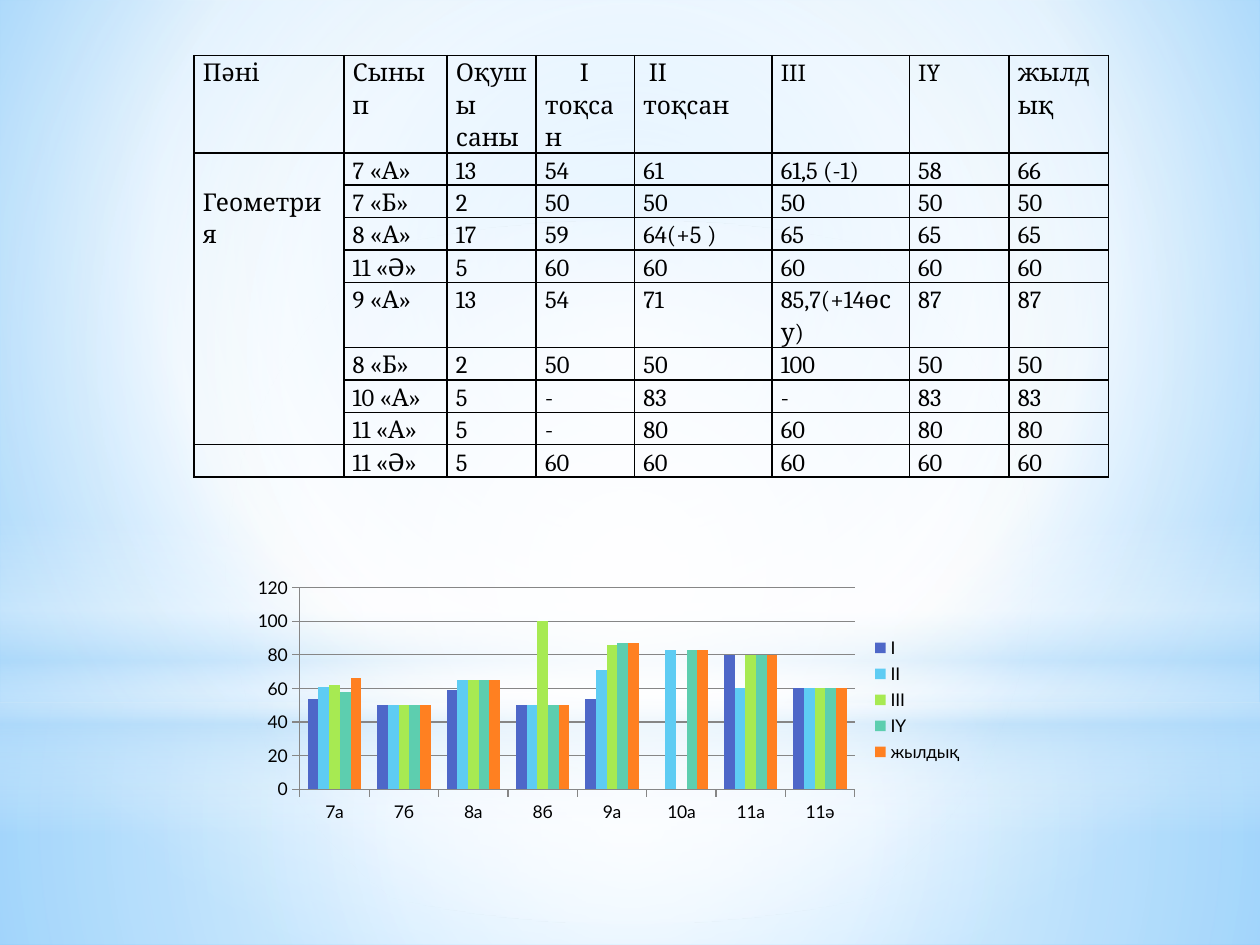
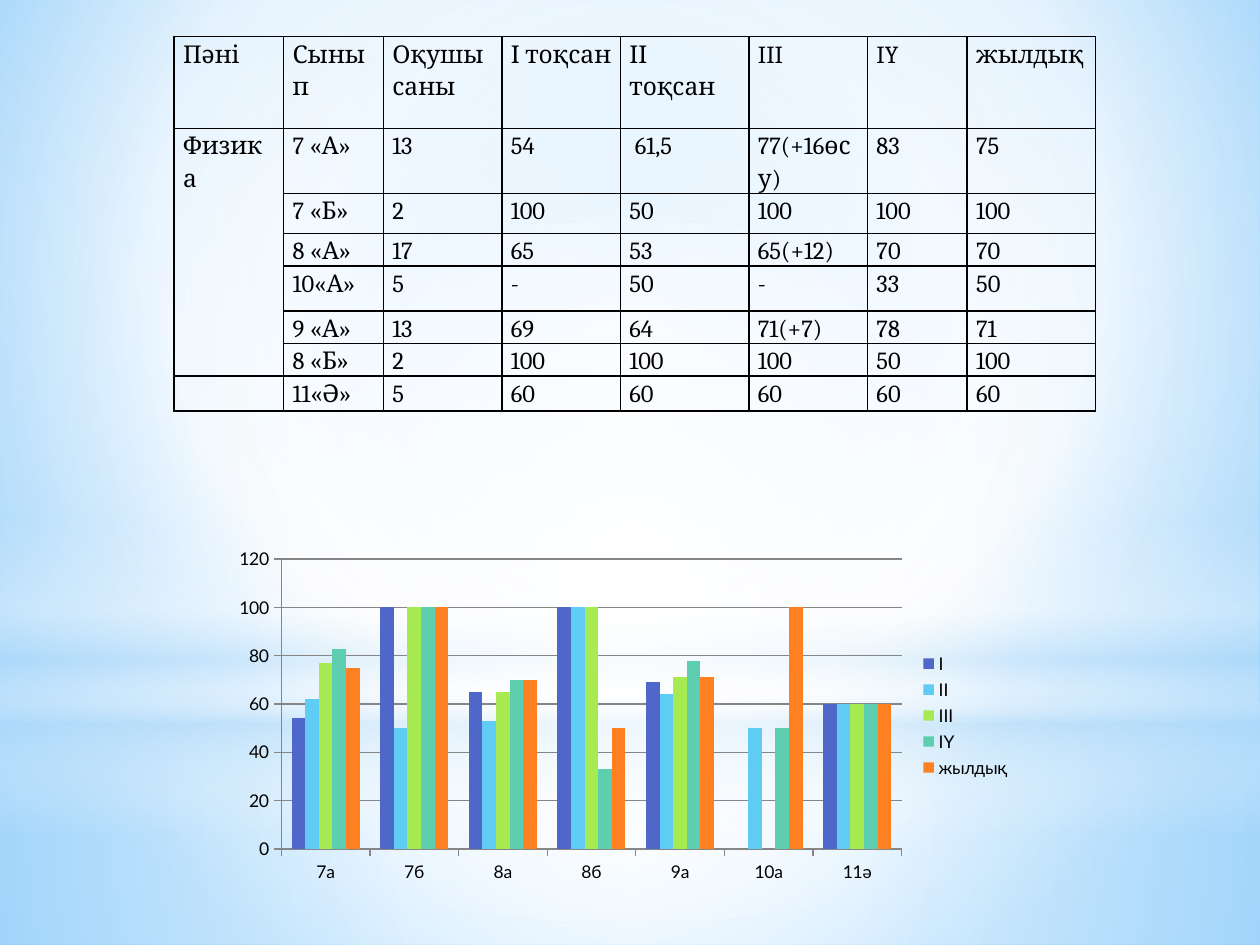
import pptx
import pptx.util
import pptx.chart.data
import pptx.dml.color
import pptx.enum.chart
import pptx.enum.shapes
import pptx.oxml
import pptx.oxml.ns
import lxml.etree

Cm = pptx.util.Cm
Pt = pptx.util.Pt
RGB = pptx.dml.color.RGBColor
qn = pptx.oxml.ns.qn

BLACK = RGB(0, 0, 0)
WHITE = RGB(255, 255, 255)
GRAY = RGB(0x86, 0x86, 0x86)
PALE = RGB(0xB4, 0xDC, 0xFA)
SKY = RGB(0x9E, 0xD5, 0xFF)
AZURE = RGB(0x5B, 0xB9, 0xFF)
TERMS = [
    ("І", RGB(0x4E, 0x67, 0xC8)),
    ("ІІ", RGB(0x5E, 0xCC, 0xF3)),
    ("ІІІ", RGB(0xA7, 0xEA, 0x52)),
    ("ІҮ", RGB(0x5D, 0xCE, 0xAF)),
    ("жылдық", RGB(0xFF, 0x80, 0x21)),
]
FONT = "Cambria"
LABEL = "Lato"
MID = (50, 50, 50, 50)

BACK = [(0, SKY, 100), (60, WHITE, 100), (100, AZURE, 100)]
RECT = pptx.enum.shapes.MSO_SHAPE.RECTANGLE
OVAL = pptx.enum.shapes.MSO_SHAPE.OVAL
BANDS = [
    (RECT, (0, 14.17, 25.4, 4.88), [(0, WHITE, 91), (37, WHITE, 76), (100, PALE, 79)], MID),
    (RECT, (0, 0, 25.4, 14.17), [(0, WHITE, 89), (48, WHITE, 62), (100, PALE, 79)], MID),
    (RECT, (0, 10.46, 25.4, 6.35),
     [(0, WHITE, 0), (29, WHITE, 30), (45, PALE, 40), (55, WHITE, 26), (65, PALE, 60), (100, WHITE, 0)], None),
    (OVAL, (0, 4.45, 25.4, 14.17), [(0, WHITE, 100), (56, WHITE, 0)], MID),
]

PAGES = [
    {
        "spot": (3.91, 1.12), "tall": 8.86,
        "cols": [3.02, 2.08, 1.8, 1.98, 2.77, 2.77, 2.01, 2.01],
        "rows": [1.22] + [0.61] * 9,
        "head": ["Пәні", "Сынып", "Оқушы саны", "І тоқсан", " ІІ\nтоқсан", "III", "IY", "жылдық"],
        "topic": "Геометрия",
        "drop": 0.65, "indent": 0.7,
        "marks": [
            ["7 «А»", "13", "54", "61", "61,5 (-1)", "58", "66"],
            ["7 «Б»", "2", "50", "50", "50", "50", "50"],
            ["8 «А»", "17", "59", "64(+5 )", "65", "65", "65"],
            ["11 «Ә»", "5", "60", "60", "60", "60", "60"],
            ["9 «А»", "13", "54", "71", "85,7(+14өсу)", "87", "87"],
            ["8 «Б»", "2", "50", "50", "100", "50", "50"],
            ["10 «А»", "5", "-", "83", "-", "83", "83"],
            ["11 «А»", "5", "-", "80", "60", "80", "80"],
            ["11 «Ә»", "5", "60", "60", "60", "60", "60"],
        ],
        "plot": (4.9, 11.53, 14.76, 5.16),
        "cats": ["7а", "7б", "8а", "8б", "9а", "10а", "11а", "11ә"],
        "vals": [
            [54, 50, 59, 50, 54, None, 80, 60],
            [61, 50, 65, 50, 71, 83, 60, 60],
            [62, 50, 65, 100, 86, None, 80, 60],
            [58, 50, 65, 50, 87, 83, 80, 60],
            [66, 50, 65, 50, 87, 83, 80, 60],
        ],
    },
    {
        "spot": (3.51, 0.74), "tall": 7.7,
        "cols": [2.21, 2.01, 2.39, 2.39, 2.59, 2.39, 2.01, 2.59],
        "rows": [1.85, 1.02, 0.81, 0.51, 0.91, 0.51, 0.51, 0.71],
        "head": ["Пәні", "Сынып", "Оқушы саны", "І тоқсан", "ІІ\nтоқсан", "III", "IY", "жылдық"],
        "topic": "Физика",
        "drop": 0, "indent": 0,
        "marks": [
            ["7 «А»", "13", "54", " 61,5", "77(+16өсу)", "83", "75"],
            ["7 «Б»", "2", "100", "50", "100", "100", "100"],
            ["8 «А»", "17", "65", "53", "65(+12)", "70", "70"],
            ["10«А»", "5", "-", "50", "-", "33", "50"],
            ["9 «А»", "13", "69", "64", "71(+7)", "78", "71"],
            ["8 «Б»", "2", "100", "100", "100", "50", "100"],
            ["11«Ә»", "5", "60", "60", "60", "60", "60"],
        ],
        "plot": (4.5, 10.92, 16.13, 7.01),
        "cats": ["7а", "7б", "8а", "8б", "9а", "10а", "11ә"],
        "vals": [
            [54, 100, 65, 100, 69, None, 60],
            [62, 50, 53, 100, 64, 50, 60],
            [77, 100, 65, 100, 71, None, 60],
            [83, 100, 70, 33, 78, 50, 60],
            [75, 100, 70, 50, 71, 100, 60],
        ],
    },
]


def cms(*nums):
    return [Cm(num) for num in nums]


def add(node, tag, **attrs):
    return lxml.etree.SubElement(node, qn(tag), {key: str(val) for key, val in attrs.items()})


def blend(fill, holder, stops, focus):
    fill.solid()
    solid = holder.find(qn("a:solidFill"))
    grad = pptx.oxml.parse_xml(f'<a:gradFill {pptx.oxml.ns.nsdecls("a")} rotWithShape="1"/>')
    holder.replace(solid, grad)
    steps = add(grad, "a:gsLst")
    for pos, color, alpha in stops:
        step = add(steps, "a:gs", pos=pos * 1000)
        tint = add(step, "a:srgbClr", val=color)
        if alpha < 100:
            add(tint, "a:alpha", val=alpha * 1000)
    if focus:
        way = add(grad, "a:path", path="circle")
        add(way, "a:fillToRect", **{side: num * 1000 for side, num in zip("ltrb", focus)})
    else:
        add(grad, "a:lin", ang=5400000, scaled=0)


def dress(deck, slide):
    master = deck.slide_master
    fill = master.background.fill
    fill.solid()
    blend(fill, master.element.find(".//" + qn("p:bgPr")), BACK, (20, 10, 20, 60))
    for rank, (kind, box, stops, focus) in enumerate(BANDS):
        band = slide.shapes.add_shape(kind, *cms(*box))
        band.shadow.inherit = False
        band.line.fill.background()
        blend(band.fill, band.element.spPr, stops, focus)
        master.shapes.element.insert(2 + rank, band.element)


def write(cell, text, indent=0):
    cell.margin_left = cell.margin_right = Cm(0.18)
    cell.margin_top = cell.margin_bottom = 0
    frame = cell.text_frame
    for rank, line in enumerate(text.split("\n")):
        para = frame.add_paragraph() if rank else frame.paragraphs[0]
        para.line_spacing = 1.15
        if indent:
            props = para._p.get_or_add_pPr()
            props.set("marL", "0")
            props.set("indent", str(Cm(indent)))
        if line:
            run = para.add_run()
            run.text = line
            run.font.size = Pt(14)
            run.font.name = FONT
            run.font.color.rgb = BLACK
        else:
            add(add(para._p, "a:endParaRPr", sz=1400), "a:latin", typeface=FONT)


def frame_cell(cell):
    props = cell._tc.get_or_add_tcPr()
    for side in "LRTB":
        line = add(props, "a:ln" + side, w=Pt(1))
        add(add(line, "a:solidFill"), "a:srgbClr", val=BLACK)
    cell.fill.background()


def add_marks(slide, page):
    marks = page["marks"]
    first = [page["topic"]] + [""] * (len(marks) - 1)
    grid = [page["head"]] + [[name] + row for name, row in zip(first, marks)]
    count = len(grid)
    shape = slide.shapes.add_table(
        count, len(page["cols"]), *cms(*page["spot"], sum(page["cols"]), page["tall"]))
    table = shape.table
    table.first_row = table.horz_banding = False
    for col, wide in zip(table.columns, page["cols"]):
        col.width = Cm(wide)
    for row, tall in zip(table.rows, page["rows"]):
        row.height = Cm(tall)
    shape.height = Cm(page["tall"])
    table.cell(1, 0).merge(table.cell(count - 2, 0))
    for top, texts in enumerate(grid):
        for left, text in enumerate(texts):
            cell = table.cell(top, left)
            write(cell, text, page["indent"] if (top, left) == (0, 3) else 0)
            frame_cell(cell)
    table.cell(1, 0).margin_top = Cm(page["drop"])


def add_plot(slide, page):
    data = pptx.chart.data.CategoryChartData()
    data.categories = page["cats"]
    for (name, color), vals in zip(TERMS, page["vals"]):
        data.add_series(name, vals)
    kind = pptx.enum.chart.XL_CHART_TYPE.COLUMN_CLUSTERED
    chart = slide.shapes.add_chart(kind, *cms(*page["plot"]), data).chart
    chart.has_title = False
    chart.font.size = Pt(10)
    chart.font.name = LABEL
    chart.font.color.rgb = BLACK
    chart.has_legend = True
    chart.legend.position = pptx.enum.chart.XL_LEGEND_POSITION.RIGHT
    chart.legend.include_in_layout = False
    plot = chart.plots[0]
    plot.gap_width = 150
    plot.overlap = 0
    plot.vary_by_categories = False
    for bars, (name, color) in zip(plot.series, TERMS):
        bars.format.fill.solid()
        bars.format.fill.fore_color.rgb = color
    scale = chart.value_axis
    scale.minimum_scale, scale.maximum_scale, scale.major_unit = 0, 120, 20
    scale.has_major_gridlines = True
    for axis in (scale, chart.category_axis):
        axis.major_tick_mark = pptx.enum.chart.XL_TICK_MARK.OUTSIDE
    for part in (scale, chart.category_axis, scale.major_gridlines):
        part.format.line.color.rgb = GRAY
        part.format.line.width = Pt(0.75)


def main():
    deck = pptx.Presentation()
    deck.slide_width, deck.slide_height = cms(25.4, 19.05)
    for rank, page in enumerate(PAGES):
        slide = deck.slides.add_slide(deck.slide_layouts[6])
        if rank == 0:
            dress(deck, slide)
        add_marks(slide, page)
        add_plot(slide, page)
    deck.save("out.pptx")


if __name__ == "__main__":
    main()
